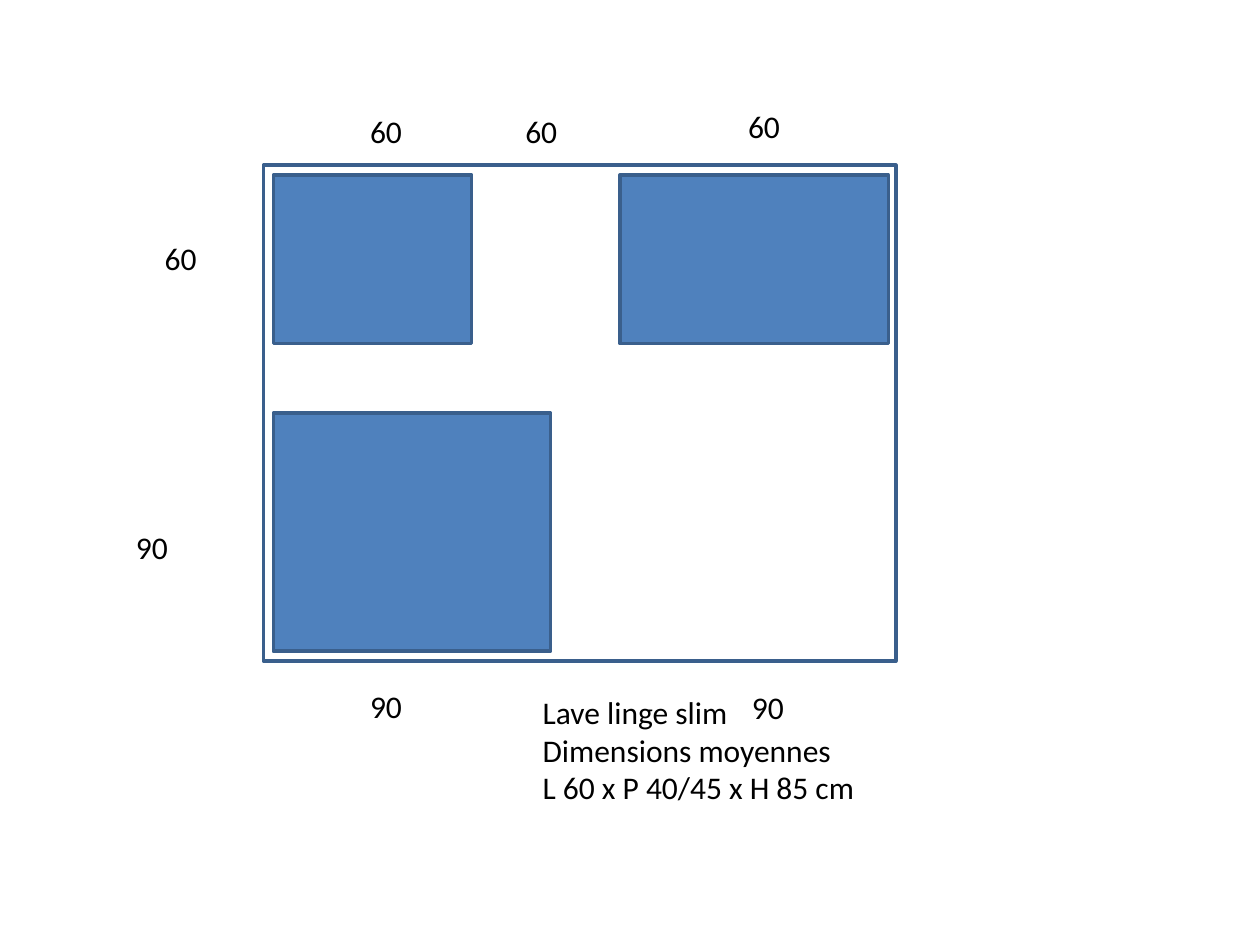
from pptx import Presentation
from pptx.dml.color import RGBColor
from pptx.enum.shapes import MSO_SHAPE as Shape
from pptx.enum.text import MSO_AUTO_SIZE as AutoSize
from pptx.util import Cm, Pt

COLOURS = {"fill": "4F81BD", "line": "3A5F8C", "text": "000000"}

LEFT_EDGE, TOP_EDGE = 5.51, 3.53
TOP_ROW_HEIGHT = 3.4
ROOM = (5.31, 3.33, 12.75, 10)
UNITS = [
    (LEFT_EDGE, 8.33, 5.59, 4.8),
    (12.5, TOP_EDGE, 5.41, TOP_ROW_HEIGHT),
    (LEFT_EDGE, TOP_EDGE, 4, TOP_ROW_HEIGHT),
]
DIMENSIONS = [
    ("90", 2.49, 10.52),
    ("90", 7.21, 13.72),
    ("60", 3.07, 4.7),
    ("60", 7.21, 2.13),
    ("90", 14.91, 13.74),
    ("60", 10.34, 2.13),
    ("60", 14.83, 2.03),
]
WASHER_NOTE = ["Lave linge slim", "Dimensions moyennes \vL 60 x P 40/45 x H 85 cm"]


class FloorPlan:
    font_name = "Calibri"
    font_size = Pt(18)
    line_width = Pt(2)

    def __init__(self, slide):
        self.slide = slide

    def colour(self, name):
        return RGBColor.from_string(COLOURS[name])

    def rectangle(self, box, filled=True):
        shape = self.slide.shapes.add_shape(Shape.RECTANGLE, *map(Cm, box))
        shape.shadow.inherit = False
        if filled:
            shape.fill.solid()
            shape.fill.fore_color.rgb = self.colour("fill")
        else:
            shape.fill.background()
        shape.line.color.rgb = self.colour("line")
        shape.line.width = self.line_width

    def text(self, lines, box, wrap=True):
        frame = self.slide.shapes.add_textbox(*map(Cm, box)).text_frame
        frame.word_wrap = wrap
        frame.auto_size = AutoSize.SHAPE_TO_FIT_TEXT
        frame.text = "\n".join(lines)
        for paragraph in frame.paragraphs:
            paragraph.font.name = self.font_name
            paragraph.font.size = self.font_size
            paragraph.font.color.rgb = self.colour("text")

    def dimension(self, value, left, top):
        self.text([value], (left, top, 1.17, 1.02), wrap=False)


def main():
    presentation = Presentation()
    presentation.slide_width, presentation.slide_height = Cm(25.4), Cm(19.05)
    plan = FloorPlan(presentation.slides.add_slide(presentation.slide_layouts[6]))

    plan.rectangle(ROOM, filled=False)
    for unit in UNITS:
        plan.rectangle(unit)
    for value, left, top in DIMENSIONS:
        plan.dimension(value, left, top)
    plan.text(WASHER_NOTE, (10.69, 13.84, 12.7, 2.57))

    presentation.save("out.pptx")


if __name__ == "__main__":
    main()
